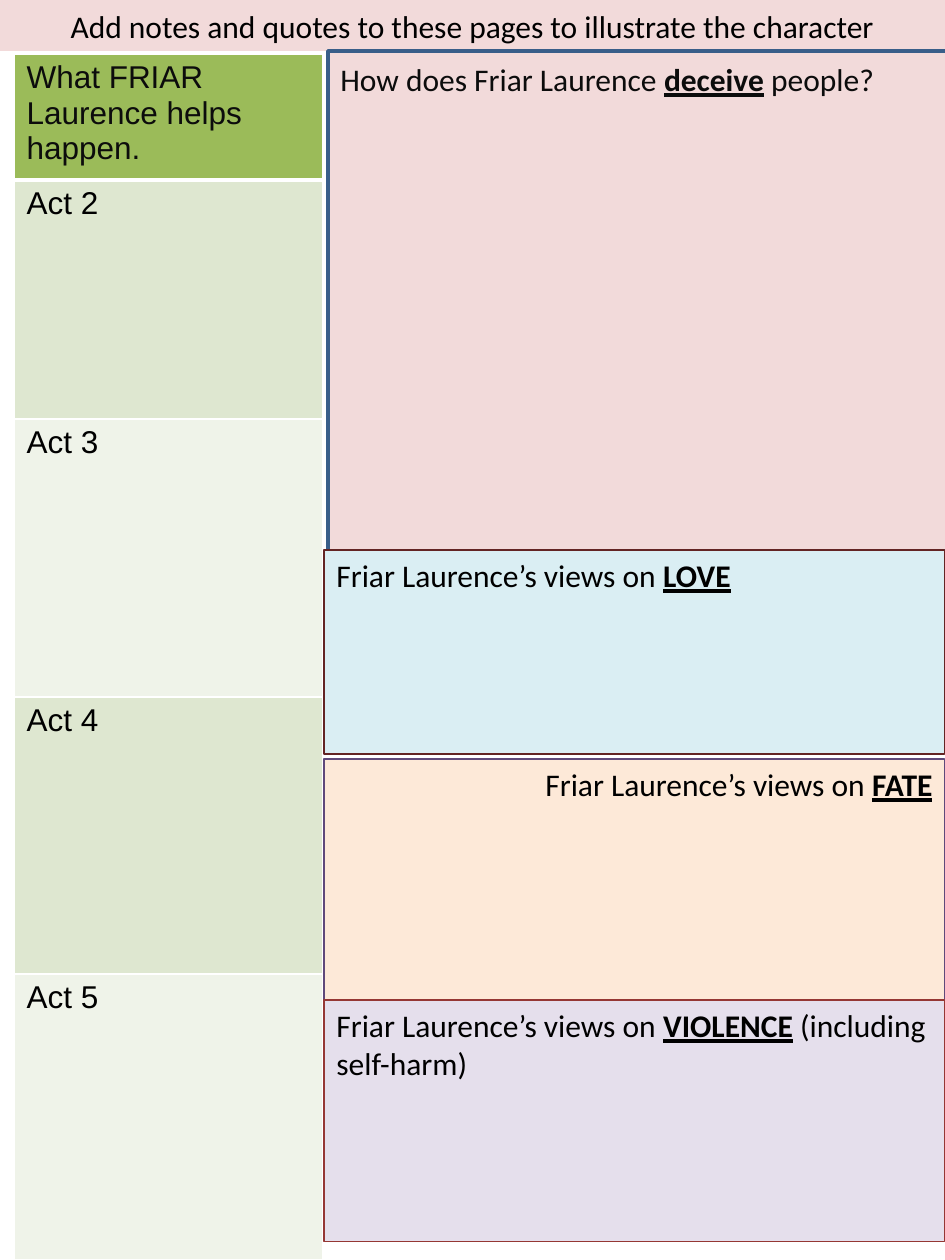
from pptx import Presentation
from pptx.dml.color import RGBColor
from pptx.enum.shapes import MSO_SHAPE as SHAPE
from pptx.enum.text import MSO_ANCHOR as ANCHOR, MSO_AUTO_SIZE as AUTO_SIZE, PP_ALIGN as ALIGN
from pptx.oxml import parse_xml
from pptx.oxml.ns import nsdecls
from pptx.util import Pt

EMU_PER_PX = 914400 // 126
WIDTH, HEIGHT = 945, 1260
COLORS = {
    "black": "000000", "ink": "0C0C0C", "white": "FFFFFF",
    "rose": "F2DADA", "navy": "395E89",
    "sky": "DAEEF3", "maroon": "632423",
    "peach": "FDE9D8", "purple": "5F497A",
    "lilac": "E5DFEC", "brick": "953734",
    "green": "9BBB59", "green_mid": "DEE7D0", "green_pale": "EFF3E9",
}


def px(value):
    return round(value * EMU_PER_PX)


def rgb(name):
    return RGBColor.from_string(COLORS[name])


def write(frame, *parts, font="Calibri", size=18, color="black",
          align=ALIGN.LEFT, anchor=ANCHOR.TOP):
    """Fill a frame with one paragraph; every second part is a bold, underlined keyword."""
    frame.word_wrap = True
    frame.auto_size = AUTO_SIZE.NONE
    frame.vertical_anchor = anchor
    paragraph = frame.paragraphs[0]
    paragraph.alignment = align
    for index, part in enumerate(parts):
        run = paragraph.add_run()
        run.text = part
        run.font.name = font
        run.font.size = Pt(size)
        run.font.color.rgb = rgb(color)
        run.font.bold = run.font.underline = index % 2 == 1


def set_borders(cell, bottom):
    """Give a cell white edges of 1 pt, with its own width at the bottom."""
    properties = cell._tc.get_or_add_tcPr()
    widths = {"lnL": 1, "lnR": 1, "lnT": 1, "lnB": bottom}
    for position, (edge, width) in enumerate(widths.items()):
        properties.insert(position, parse_xml(
            f'<a:{edge} {nsdecls("a")} w="{Pt(width)}"><a:solidFill>'
            f'<a:srgbClr val="{COLORS["white"]}"/></a:solidFill></a:{edge}>'))


class Worksheet:
    def __init__(self, slide, font="Calibri", table_font="Arial"):
        self.slide = slide
        self.font = font
        self.table_font = table_font

    def title(self, text, x, y, w, h, fill):
        title = self.slide.shapes.title
        title.left, title.top, title.width, title.height = map(px, (x, y, w, h))
        title.fill.solid()
        title.fill.fore_color.rgb = rgb(fill)
        write(title.text_frame, text, font=self.font, align=ALIGN.CENTER,
              anchor=ANCHOR.MIDDLE)

    def panel(self, x, y, w, h, fill, line, parts=(), kind=SHAPE.RECTANGLE,
              line_width=0.75, align=ALIGN.LEFT):
        panel = self.slide.shapes.add_shape(kind, *map(px, (x, y, w, h)))
        panel.shadow.inherit = False
        panel.fill.solid()
        panel.fill.fore_color.rgb = rgb(fill)
        panel.line.color.rgb = rgb(line)
        panel.line.width = Pt(line_width)
        if parts:
            write(panel.text_frame, *parts, font=self.font, align=align)

    def label(self, x, y, w, h, *parts, color):
        label = self.slide.shapes.add_textbox(*map(px, (x, y, w, h)))
        write(label.text_frame, *parts, font=self.font, color=color)

    def column_table(self, x, y, w, rows):
        """Add a one-column table from (text, height, fill) rows, the first a header."""
        total = sum(height for _, height, _ in rows)
        table = self.slide.shapes.add_table(
            len(rows), 1, *map(px, (x, y, w, total))).table
        table.first_row = table.horz_banding = False
        for index, (text, height, fill) in enumerate(rows):
            table.rows[index].height = px(height)
            cell = table.cell(index, 0)
            cell.fill.solid()
            cell.fill.fore_color.rgb = rgb(fill)
            set_borders(cell, bottom=1 if index else 3)
            write(cell.text_frame, text, font=self.table_font,
                  color="black" if index else "ink")


def main():
    deck = Presentation()
    deck.slide_width, deck.slide_height = px(WIDTH), px(HEIGHT)
    sheet = Worksheet(deck.slides.add_slide(deck.slide_layouts[5]))

    sheet.title("Add notes and quotes to these pages to illustrate the character",
                0, 0, WIDTH, 51, fill="rose")
    sheet.column_table(14, 54, 309, [
        ("What FRIAR Laurence helps happen.", 126, "green"),
        ("Act 2", 239, "green_mid"),
        ("Act 3", 278, "green_pale"),
        ("Act 4", 277, "green_mid"),
        ("Act 5", 286, "green_pale"),
    ])

    panel_width = 621
    sheet.panel(328, 51, panel_width, 500, "rose", "navy",
                kind=SHAPE.FLOWCHART_PROCESS, line_width=2)
    views = [
        (550, 204, "sky", "maroon", ALIGN.LEFT, ["LOVE"]),
        (759, 242, "peach", "purple", ALIGN.RIGHT, ["FATE"]),
        (1000, 242, "lilac", "brick", ALIGN.LEFT,
         ["VIOLENCE", " (including self-harm)"]),
    ]
    for top, height, fill, line, align, theme in views:
        sheet.panel(324, top, panel_width, height, fill, line,
                    ["Friar Laurence’s views on ", *theme], align=align)
    sheet.label(328, 54, panel_width, 89, "How does Friar Laurence ", "deceive",
                " people?", color="ink")

    deck.save("out.pptx")


if __name__ == "__main__":
    main()
